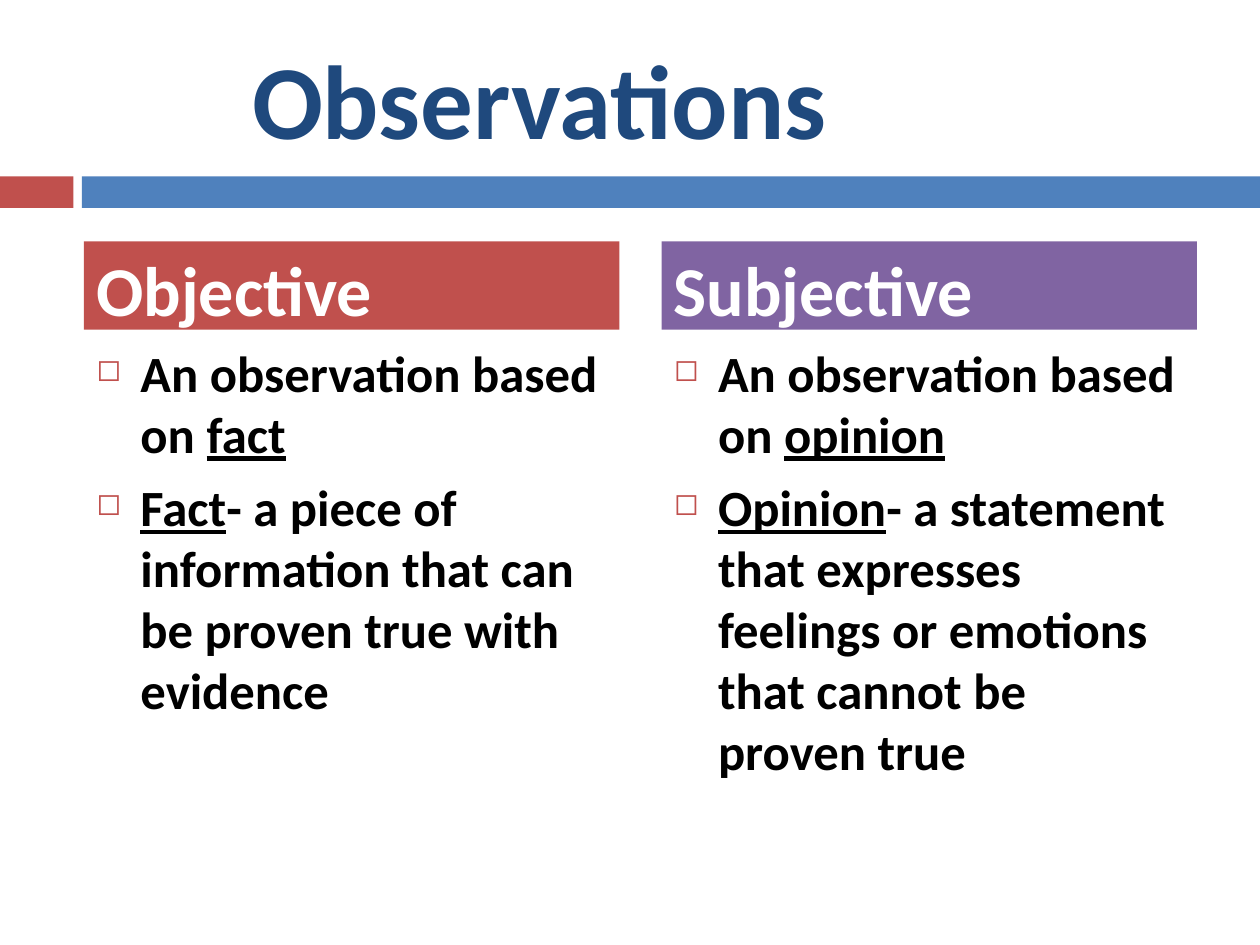
from lxml import etree
from pptx import Presentation
from pptx.dml.color import RGBColor
from pptx.enum.shapes import MSO_SHAPE
from pptx.enum.text import MSO_ANCHOR, PP_ALIGN
from pptx.oxml.ns import qn
from pptx.util import Inches, Pt

RECT = MSO_SHAPE.RECTANGLE
MID, TOP = MSO_ANCHOR.MIDDLE, MSO_ANCHOR.TOP
LEFT = PP_ALIGN.LEFT
HUE = {"red": "C0504D", "blue": "4F81BD", "plum": "8064A2",
       "navy": "1F497D", "white": "FFFFFF", "black": "000000"}

deck = Presentation()
deck.slide_width, deck.slide_height = Inches(10), Inches(7.5)
unit = deck.slide_width / 120
slide = deck.slides.add_slide(deck.slide_layouts[5])


def grid(*cells):
    return [round(cell * unit) for cell in cells]


def write(shape, paras, size, hue, anchor=MID, bullet=None, inset=(1.2, 0.6)):
    frame = shape.text_frame
    frame.word_wrap = True
    frame.vertical_anchor = anchor
    frame.margin_left, frame.margin_top = grid(*inset)
    for i, runs in enumerate(paras):
        para = frame.add_paragraph() if i else frame.paragraphs[0]
        para.alignment = LEFT
        if i:
            para.space_before = Pt(7)
        if bullet:
            props = para._p.get_or_add_pPr()
            props.set("marL", str(Inches(0.35)))
            props.set("indent", str(-Inches(0.35)))
            color = etree.SubElement(props, qn("a:buClr"))
            etree.SubElement(color, qn("a:srgbClr"), val=HUE["red"])
            etree.SubElement(props, qn("a:buSzPct"), val="60000")
            etree.SubElement(props, qn("a:buChar"), char=bullet)
        for text, under in runs:
            run = para.add_run()
            run.text = text
            font = run.font
            font.name, font.size, font.bold = "Calibri", Pt(size), True
            font.underline = under
            font.color.rgb = RGBColor.from_string(HUE[hue])


title = slide.shapes.title
title.left, title.top, title.width, title.height = grid(7, 3.6, 107, 11.4)
write(title, [[("Observations", False)]], 60, "navy", inset=(17, 0.6))

bars = [
    (0, 16.8, 7, 3, "red", None),
    (7.8, 16.8, 112.2, 3, "blue", None),
    (8, 23, 51, 8.4, "red", "Objective"),
    (63, 23, 51, 8.4, "plum", "Subjective"),
]
for x, y, w, h, hue, label in bars:
    bar = slide.shapes.add_shape(RECT, *grid(x, y, w, h))
    bar.shadow.inherit = False
    bar.fill.solid()
    bar.fill.fore_color.rgb = RGBColor.from_string(HUE[hue])
    bar.line.fill.background()
    if label:
        write(bar, [[(label, False)]], 40, "white", inset=(1.2, 1.2))

notes = [
    (8, "fact", "Fact", "- a piece of information that can be proven true with evidence"),
    (63, "opinion", "Opinion",
     "- a statement that expresses feelings or emotions that cannot be proven true"),
]
for x, basis, term, sense in notes:
    box = slide.shapes.add_textbox(*grid(x, 32, 51, 47))
    paras = [[("An observation based on ", False), (basis, True)],
             [(term, True), (sense, False)]]
    write(box, paras, 29, "black", anchor=TOP, bullet="◻")

deck.save("out.pptx")
